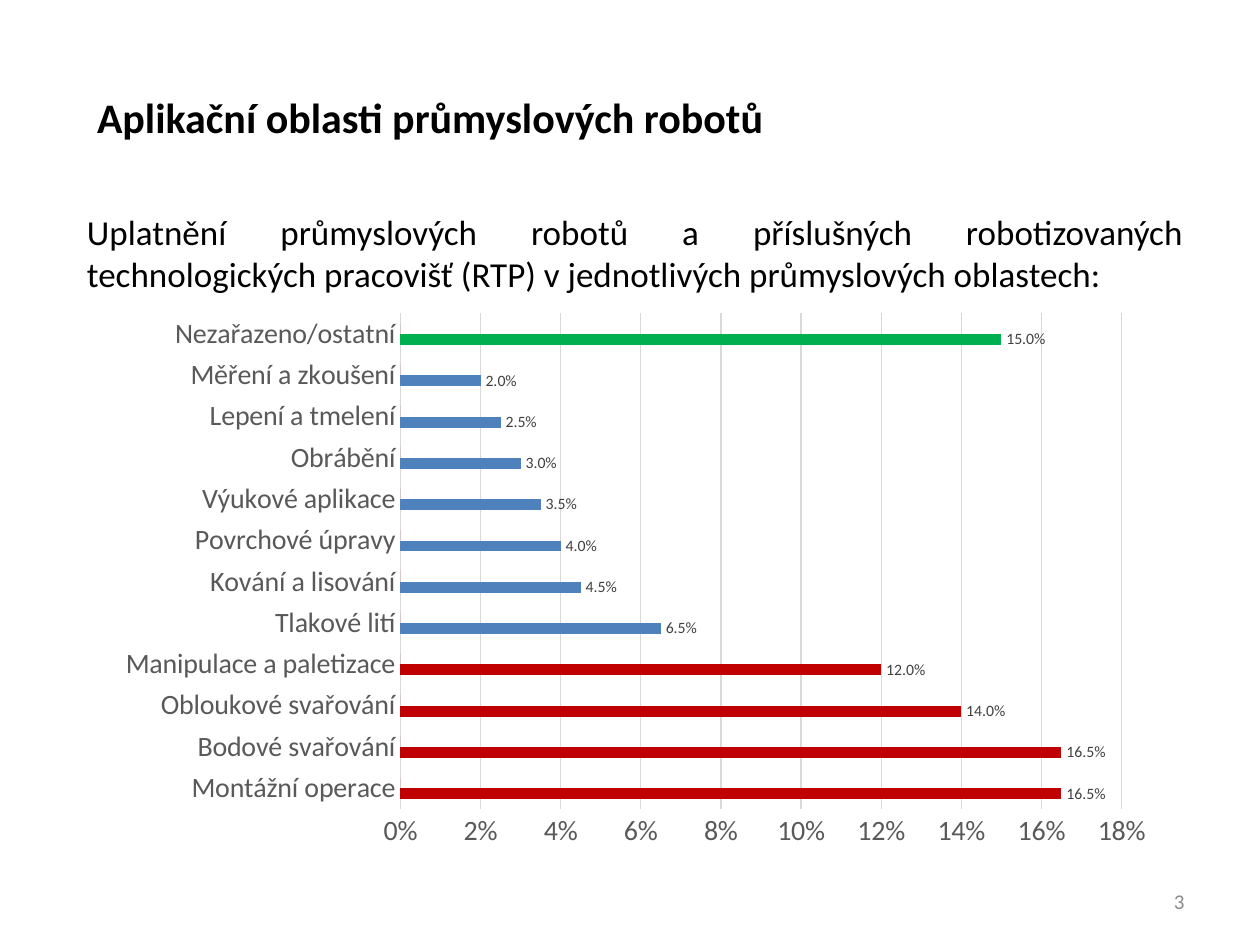
from lxml.etree import SubElement
from pptx import Presentation
from pptx.chart.data import CategoryChartData
from pptx.dml.color import RGBColor
from pptx.enum.chart import XL_CHART_TYPE, XL_LABEL_POSITION, XL_TICK_MARK
from pptx.enum.text import MSO_ANCHOR, MSO_AUTO_SIZE, PP_ALIGN
from pptx.oxml.ns import qn
from pptx.util import Pt

APPLICATIONS = [
    ("Montážní operace", 0.165),
    ("Bodové svařování", 0.165),
    ("Obloukové svařování", 0.14),
    ("Manipulace a paletizace", 0.12),
    ("Tlakové lití", 0.065),
    ("Kování a lisování", 0.045),
    ("Povrchové úpravy", 0.04),
    ("Výukové aplikace", 0.035),
    ("Obrábění", 0.03),
    ("Lepení a tmelení", 0.025),
    ("Měření a zkoušení", 0.02),
    ("Nezařazeno/ostatní", 0.15),
]
LEADING, UNCLASSIFIED = "C00000", "00B050"
HIGHLIGHTS = {**dict.fromkeys(range(4), LEADING), len(APPLICATIONS) - 1: UNCLASSIFIED}


def rgb(code):
    """Return the colour for a hex string."""
    return RGBColor.from_string(code)


def apply(target, values):
    """Set each named attribute on the target."""
    for name, value in values.items():
        setattr(target, name, value)


class SlideBuilder:
    """Hold the style and the current slide."""

    font_name = "Calibri"
    black, axis_grey, label_grey, number_grey = "000000", "595959", "404040", "8C8C8C"
    grid_grey, blue, red = "D9D9D9", "4F81BD", "C0504D"

    def __init__(self, deck):
        """Add a title and content slide to the deck."""
        self.slide = deck.slides.add_slide(deck.slide_layouts[1])

    def style_font(self, font, size, color, bold=False):
        """Format a font."""
        apply(font, {"name": self.font_name, "size": Pt(size), "bold": bold})
        font.color.rgb = rgb(color)

    def style_line(self, line):
        """Format a chart line."""
        line.width = Pt(0.75)
        line.color.rgb = rgb(self.grid_grey)

    def place_text(self, shape, box, text, size, color, bold=False,
                   align=PP_ALIGN.LEFT, anchor=MSO_ANCHOR.TOP, after=0):
        """Place a shape and fill it with one formatted paragraph."""
        apply(shape, dict(zip(("left", "top", "width", "height"), map(Pt, box))))
        frame = shape.text_frame
        apply(frame, {"text": text, "word_wrap": True, "vertical_anchor": anchor,
                      "auto_size": MSO_AUTO_SIZE.NONE})
        paragraph = frame.paragraphs[0]
        apply(paragraph, {"alignment": align, "space_before": Pt(0),
                          "space_after": Pt(after), "line_spacing": 1.0})
        self.style_font(paragraph.runs[0].font, size, color, bold)
        return paragraph

    def title(self, box, text):
        """Fill the title placeholder."""
        self.place_text(self.slide.shapes.title, box, text, 24, self.black, bold=True)

    def body(self, box, text):
        """Fill the body placeholder with an unbulleted paragraph."""
        paragraph = self.place_text(self.slide.placeholders[1], box, text, 20, self.black,
                                    align=PP_ALIGN.JUSTIFY, after=6)
        properties = paragraph._p.get_or_add_pPr()
        for name in ("marL", "indent"):
            properties.set(name, "0")
        SubElement(properties, qn("a:buNone"))

    def page_number(self, box, text):
        """Add the page number."""
        self.place_text(self.slide.shapes.add_textbox(*map(Pt, box)), box, text, 12,
                        self.number_grey, align=PP_ALIGN.RIGHT, anchor=MSO_ANCHOR.MIDDLE)

    def bar_chart(self, box, shares, highlights):
        """Add the bar chart with highlighted points."""
        names, values = zip(*shares)
        data = CategoryChartData()
        data.categories = names
        data.add_series("Series 1", values)
        data.add_series("Series 2", [0] * len(values))
        chart = self.slide.shapes.add_chart(
            XL_CHART_TYPE.BAR_CLUSTERED, *map(Pt, box), data).chart
        apply(chart, {"has_legend": False, "has_title": False})
        self.style_font(chart.font, 10, self.black)
        plot = chart.plots[0]
        apply(plot, {"gap_width": 182, "overlap": 0, "vary_by_categories": False})
        for series, color in zip(plot.series, (self.blue, self.red)):
            series.invert_if_negative = False
            series.format.fill.solid()
            series.format.fill.fore_color.rgb = rgb(color)
        robots = plot.series[0]
        for index, color in highlights.items():
            fill = robots.points[index].format.fill
            fill.solid()
            fill.fore_color.rgb = rgb(color)
        labels = robots.data_labels
        apply(labels, {"show_value": True, "number_format": "0.0%",
                       "number_format_is_linked": False,
                       "position": XL_LABEL_POSITION.OUTSIDE_END})
        self.style_font(labels.font, 9, self.label_grey)
        self.axes(chart.category_axis, chart.value_axis)

    def axes(self, category, share):
        """Format both chart axes."""
        for axis in (category, share):
            apply(axis, {"major_tick_mark": XL_TICK_MARK.NONE,
                         "minor_tick_mark": XL_TICK_MARK.NONE})
            self.style_font(axis.tick_labels.font, 16, self.axis_grey)
        self.style_line(category.format.line)
        apply(share, {"minimum_scale": 0, "maximum_scale": 0.18, "major_unit": 0.02,
                      "has_major_gridlines": True})
        apply(share.tick_labels, {"number_format": "0%", "number_format_is_linked": False})
        self.style_line(share.major_gridlines.format.line)
        share.format.line.fill.background()


def main():
    """Build and save the slide."""
    deck = Presentation()
    apply(deck, {"slide_width": Pt(720), "slide_height": Pt(540)})
    builder = SlideBuilder(deck)
    builder.title((48.24, 48.96, 635.04, 36), "Aplikační oblasti průmyslových robotů")
    builder.page_number((516.24, 500.4, 167.76, 28.8), "3")
    builder.body((42.48, 116.64, 640.8, 55.44),
                 "Uplatnění průmyslových robotů a příslušných robotizovaných "
                 "technologických pracovišť (RTP) v jednotlivých průmyslových oblastech:")
    builder.bar_chart((59.76, 172.8, 606.96, 318.24), APPLICATIONS, HIGHLIGHTS)
    deck.save("out.pptx")


if __name__ == "__main__":
    main()
